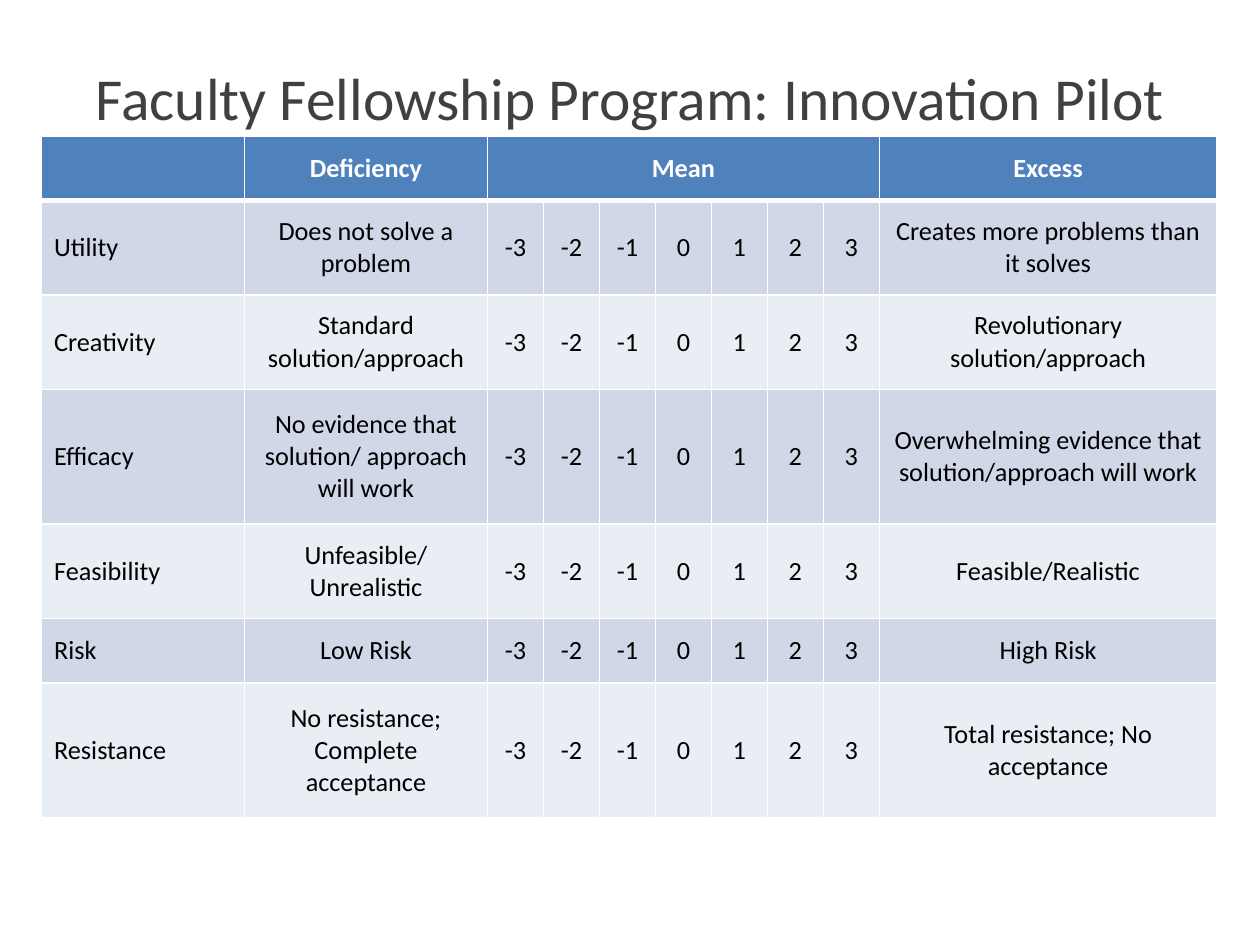
from pptx import Presentation
from pptx.dml.color import RGBColor as RGB
from pptx.enum.text import MSO_ANCHOR as Anchor, PP_ALIGN as Align
from pptx.oxml import parse_xml
from pptx.oxml.ns import nsdecls
from pptx.util import Inches, Pt

FONT = "Calibri"
GRAY, BLACK, WHITE = RGB(0x40, 0x40, 0x40), RGB(0, 0, 0), RGB(255, 255, 255)
BLUE = RGB(0x4F, 0x81, 0xBD)
BANDS = RGB(0xD0, 0xD8, 0xE8), RGB(0xE9, 0xED, 0xF4)

# Content
TITLE = "Faculty Fellowship Program: Innovation Pilot"
SCALE = ["-3", "-2", "-1", "0", "1", "2", "3"]
HEAD = ["", "Deficiency", "Mean"] + [""] * (len(SCALE) - 1) + ["Excess"]
TRAITS = [
    ("Utility", "Does not solve a problem", "Creates more problems than it solves", 0.75),
    ("Creativity", "Standard solution/approach", "Revolutionary solution/approach", 0.75),
    ("Efficacy", "No evidence that solution/ approach will work",
     "Overwhelming evidence that solution/approach will work", 1.07),
    ("Feasibility", "Unfeasible/ Unrealistic", "Feasible/Realistic", 0.75),
    ("Risk", "Low Risk", "High Risk", 0.51),
    ("Resistance", "No resistance; Complete acceptance",
     "Total resistance; No acceptance", 1.07),
]
MEAN = 3.11  # width shared by the scale columns
WIDTHS = [1.61, 1.93] + [MEAN / len(SCALE)] * len(SCALE) + [2.68]
HEIGHTS = [0.51] + [trait[-1] for trait in TRAITS]
ROWS = [HEAD] + [[name, low, *SCALE, high] for name, low, high, _ in TRAITS]


def style(par, size, color, align, bold=False):
    par.alignment = align
    font = par.font
    font.name, font.size, font.bold = FONT, Pt(size), bold
    font.color.rgb = color


def border(cell, top, bottom):
    props = cell._tc.get_or_add_tcPr()
    for side, width in (("L", 1), ("R", 1), ("T", top), ("B", bottom)):
        props.append(parse_xml(
            f'<a:ln{side} {nsdecls("a")} w="{Pt(width)}"><a:solidFill>'
            f'<a:srgbClr val="{WHITE}"/></a:solidFill></a:ln{side}>'))


deck = Presentation()
deck.slide_width, deck.slide_height = Inches(10), Inches(7.5)
slide = deck.slides.add_slide(deck.slide_layouts[6])

# Title
box = slide.shapes.add_textbox(Inches(0.66), Inches(0.37), Inches(8.77), Inches(0.8))
frame = box.text_frame
frame.word_wrap = True
frame.vertical_anchor = Anchor.MIDDLE
frame.text = TITLE
style(frame.paragraphs[0], 34, GRAY, Align.LEFT)

# Table grid
table = slide.shapes.add_table(
    len(ROWS), len(WIDTHS), Inches(0.33), Inches(1.08),
    Inches(sum(WIDTHS)), Inches(sum(HEIGHTS))).table
for col, width in zip(table.columns, WIDTHS):
    col.width = Inches(width)
for row, height in zip(table.rows, HEIGHTS):
    row.height = Inches(height)

# Cells
for r, texts in enumerate(ROWS):
    head = r == 0
    for c, text in enumerate(texts):
        cell = table.cell(r, c)
        cell.text = text
        cell.vertical_anchor = Anchor.MIDDLE
        style(cell.text_frame.paragraphs[0], 15, WHITE if head else BLACK,
              Align.CENTER if c else Align.LEFT, head)
        border(cell, 3 if r == 1 else 1, 3 if head else 1)
        cell.fill.solid()
        cell.fill.fore_color.rgb = BLUE if head else BANDS[(r - 1) % 2]
table.cell(0, 2).merge(table.cell(0, 1 + len(SCALE)))

deck.save("out.pptx")
